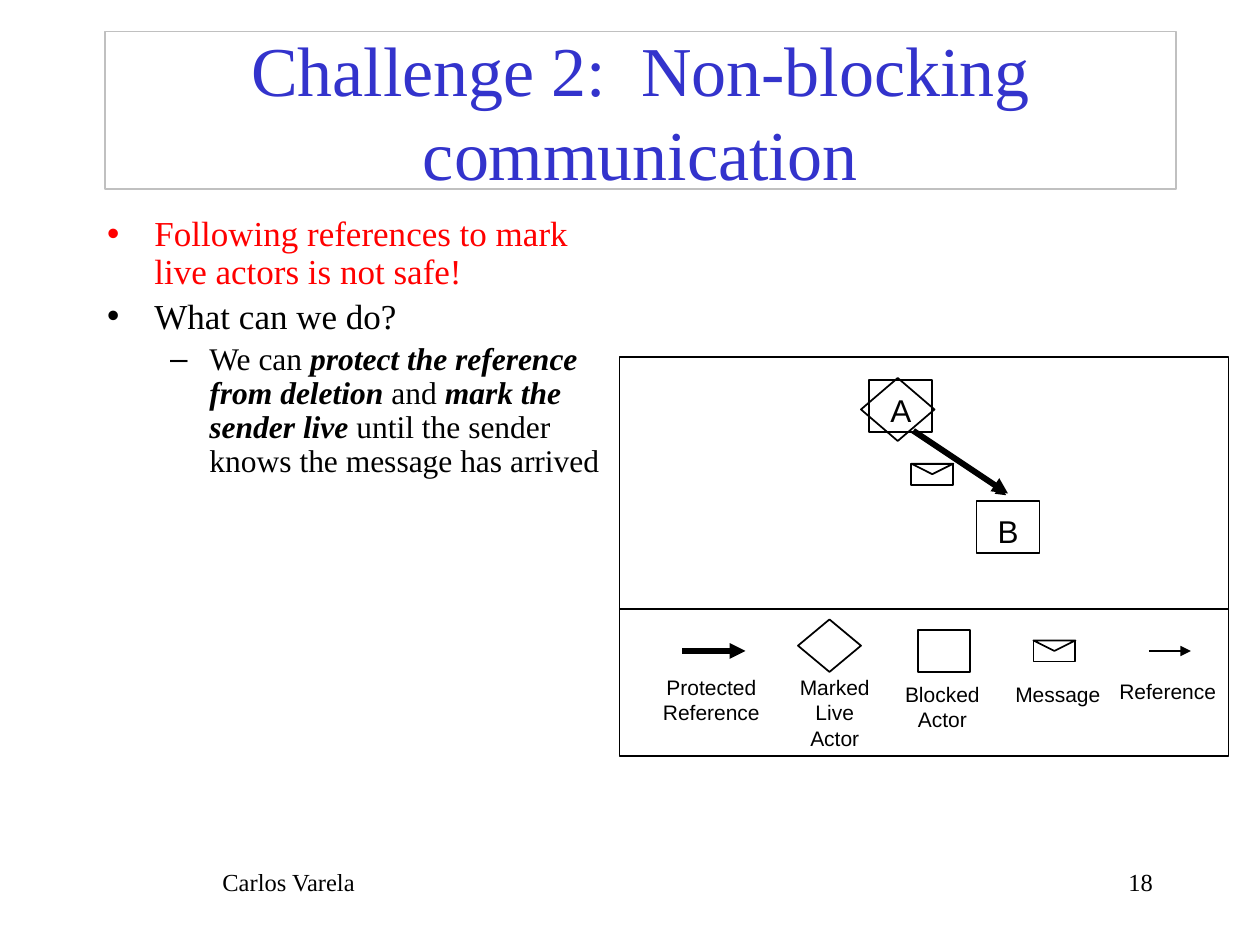
from lxml import etree
from pptx import Presentation
from pptx.dml.color import RGBColor
from pptx.enum.shapes import MSO_CONNECTOR, MSO_SHAPE
from pptx.enum.text import MSO_ANCHOR, MSO_AUTO_SIZE, PP_ALIGN
from pptx.oxml.ns import qn
from pptx.util import Pt

RECTANGLE, DIAMOND = MSO_SHAPE.RECTANGLE, MSO_SHAPE.DIAMOND
TRIANGLE = MSO_SHAPE.ISOSCELES_TRIANGLE
STRAIGHT = MSO_CONNECTOR.STRAIGHT
LEFT, CENTER, RIGHT = PP_ALIGN.LEFT, PP_ALIGN.CENTER, PP_ALIGN.RIGHT
MIDDLE, TOP = MSO_ANCHOR.MIDDLE, MSO_ANCHOR.TOP
NO_AUTOFIT, GROW = MSO_AUTO_SIZE.NONE, MSO_AUTO_SIZE.SHAPE_TO_FIT_TEXT

SERIF, SANS = "Times New Roman", "Arial"
BLACK, RED, BLUE, GRAY = "000000", "FF0000", "3333CC", "C0C0C0"

# Level, size, colour and (text, emphasised) parts of each bullet
BULLETS = [
    (0, 20, RED, [("Following references to mark live actors is not safe!", False)]),
    (0, 20, BLACK, [("What can we do?", False)]),
    (1, 18, BLACK, [
        ("We can ", False),
        ("protect the reference from deletion", True),
        (" and ", False),
        ("mark the sender live", True),
        (" until the sender knows the message has arrived", False),
    ]),
]
BULLET_INDENTS = [(27, -27), (58.5, -22.5)]

# Text, centre, top, width and height of each legend label
LEGEND_LABELS = [
    ("Protected\nReference", 406.5, 382, 74, 36),
    ("Marked\nLive\nActor", 477, 382, 62, 50),
    ("Blocked\nActor", 538.5, 386, 62, 36),
    ("Message", 604.5, 386, 68, 22),
    ("Reference", 667.3, 384, 74, 22),
]


def rgb(hex_color):
    return RGBColor.from_string(hex_color)


def place(shape, left, top, width, height):
    shape.left, shape.top = Pt(left), Pt(top)
    shape.width, shape.height = Pt(width), Pt(height)


def style_run(run, size, font, color=BLACK):
    run.font.size = Pt(size)
    run.font.name = font
    run.font.color.rgb = rgb(color)


def add_text(slide, text, left, top, width, height, size, font, align=LEFT, wrap=True):
    box = slide.shapes.add_textbox(Pt(left), Pt(top), Pt(width), Pt(height))
    frame = box.text_frame
    frame.text = text
    frame.word_wrap = wrap
    frame.auto_size = NO_AUTOFIT if wrap else GROW
    for paragraph in frame.paragraphs:
        paragraph.alignment = align
        for run in paragraph.runs:
            style_run(run, size, font)


def add_outline(slide, kind, left, top, width, height):
    outline = slide.shapes.add_shape(kind, Pt(left), Pt(top), Pt(width), Pt(height))
    outline.shadow.inherit = False
    outline.fill.background()
    outline.line.color.rgb = rgb(BLACK)
    outline.line.width = Pt(1)
    return outline


def add_line(slide, start, end, width=1, arrow=True):
    line = slide.shapes.add_connector(STRAIGHT, *(Pt(v) for v in (*start, *end)))
    line.line.color.rgb = rgb(BLACK)
    line.line.width = Pt(width)
    if arrow:
        etree.SubElement(line.line._get_or_add_ln(), qn("a:tailEnd"), type="triangle")
    etree.SubElement(line._element.spPr, qn("a:effectLst"))


def add_envelope(slide, left, top):
    add_outline(slide, RECTANGLE, left, top, 24, 12)
    flap = add_outline(slide, TRIANGLE, left, top, 24, 6)
    flap._element.spPr.find(qn("a:xfrm")).set("flipV", "1")


def add_actor(slide, name, left, top):
    add_outline(slide, RECTANGLE, left, top, 36, 30)
    add_text(slide, name, left + 5, top + 3, 26, 29, 18, SANS, wrap=False)


def fill_title(title):
    place(title, 60, 18, 612, 90)
    title.line.color.rgb = rgb(GRAY)
    title.line.width = Pt(0.75)
    frame = title.text_frame
    frame.text = "Challenge 2:  Non-blocking communication"
    frame.auto_size = NO_AUTOFIT
    frame.vertical_anchor = MIDDLE
    frame.paragraphs[0].alignment = CENTER
    style_run(frame.paragraphs[0].runs[0], 40, SERIF, BLUE)


def fill_bullets(body):
    place(body, 54, 120, 300, 360)
    frame = body.text_frame
    frame.auto_size = NO_AUTOFIT
    frame.vertical_anchor = TOP
    for index, (level, size, color, parts) in enumerate(BULLETS):
        paragraph = frame.add_paragraph() if index else frame.paragraphs[0]
        paragraph.level = level
        paragraph.line_spacing = 0.9
        margin, indent = BULLET_INDENTS[level]
        properties = paragraph._p.get_or_add_pPr()
        properties.set("marL", str(Pt(margin)))
        properties.set("indent", str(Pt(indent)))
        for text, emphasised in parts:
            run = paragraph.add_run()
            run.text = text
            style_run(run, size, SERIF, color)
            run.font.bold = run.font.italic = emphasised


def draw_scene(slide):
    add_outline(slide, RECTANGLE, 354, 204, 348, 228)
    add_line(slide, (354, 348), (702, 348), arrow=False)
    add_actor(slide, "A", 496.75, 217)
    add_actor(slide, "B", 558, 286.25)
    add_outline(slide, DIAMOND, 492, 216, 42, 36)
    add_line(slide, (521, 247), (575, 283))
    add_line(slide, (522, 246), (576, 282), width=3)
    add_envelope(slide, 520.75, 265)


def draw_legend(slide):
    add_line(slide, (390, 372), (426, 372), width=3)
    add_outline(slide, DIAMOND, 456, 354, 36, 30)
    add_outline(slide, RECTANGLE, 524.5, 360, 30, 24)
    add_envelope(slide, 590.5, 366)
    add_line(slide, (656.5, 372), (680.5, 372))
    for text, center, top, width, height in LEGEND_LABELS:
        add_text(slide, text, center - width / 2, top, width, height,
                 12, SANS, CENTER, wrap=False)


def main():
    deck = Presentation()
    deck.slide_width, deck.slide_height = Pt(720), Pt(540)
    slide = deck.slides.add_slide(deck.slide_layouts[1])
    fill_title(slide.shapes.title)
    fill_bullets(slide.placeholders[1])
    draw_scene(slide)
    draw_legend(slide)
    add_text(slide, "Carlos Varela", 120, 492, 480, 36, 14, SERIF)
    add_text(slide, "18", 516, 492, 150, 36, 14, SERIF, RIGHT)
    deck.save("out.pptx")


if __name__ == "__main__":
    main()
